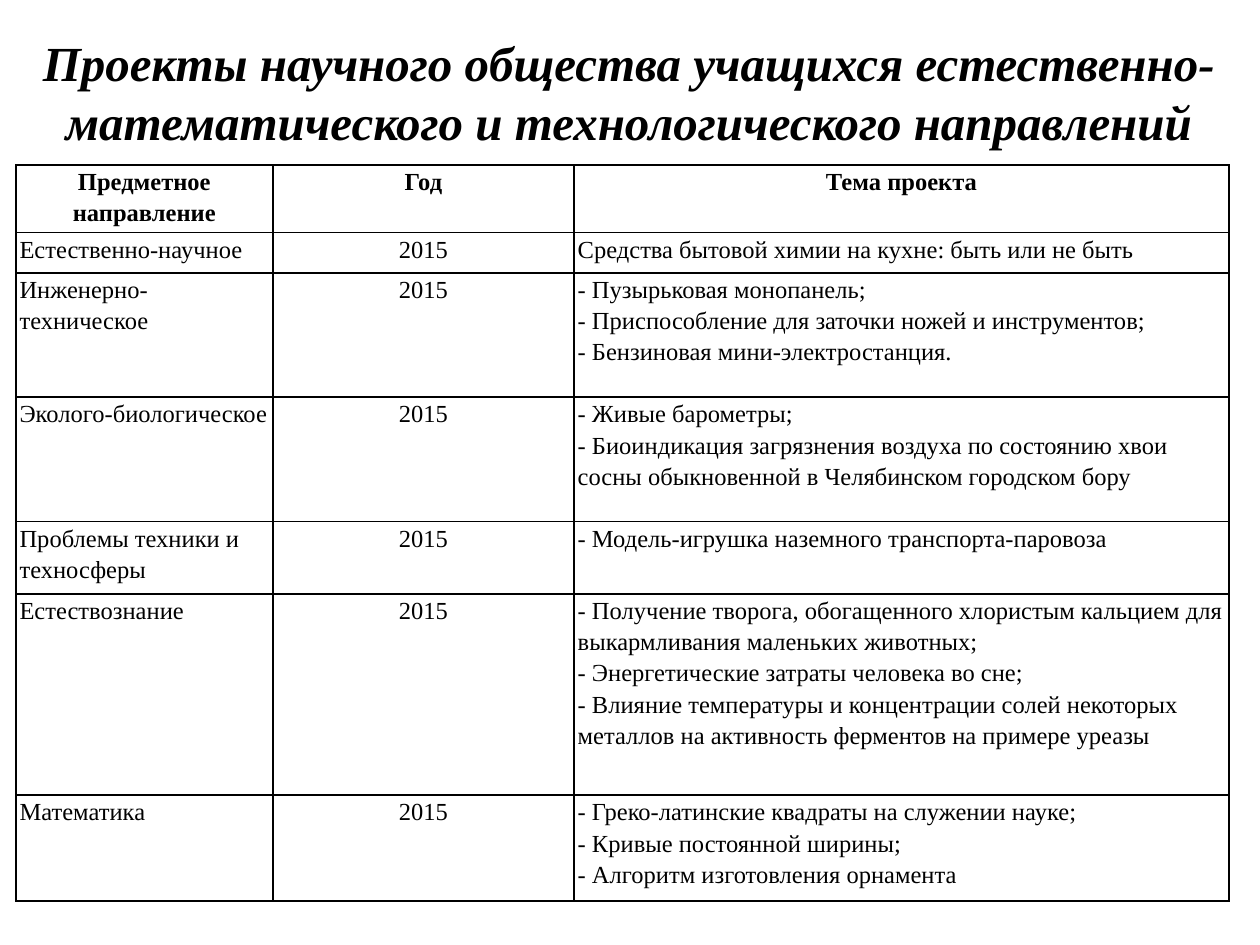
from lxml import etree
from pptx import Presentation, util as u
from pptx.dml.color import RGBColor
from pptx.enum import text
from pptx.oxml import ns

COLORS = {"ink": "000000"}
FONT = "Times New Roman"
TITLE = ("Проекты научного общества учащихся естественно-математического "
         "и технологического направлений")
YEAR = "2015"
HEADINGS = ["Предметное направление", "Год", "Тема проекта"]
PROJECTS = [
    ("Естественно-научное", ["Средства бытовой химии на кухне: быть или не быть"]),
    ("Инженерно-техническое", [
        "- Пузырьковая монопанель;",
        "- Приспособление для заточки ножей и инструментов;",
        "- Бензиновая мини-электростанция.",
    ]),
    ("Эколого-биологическое", [
        "- Живые барометры;",
        "- Биоиндикация загрязнения воздуха по состоянию хвои сосны "
        "обыкновенной в Челябинском городском бору",
    ]),
    ("Проблемы техники и техносферы", ["- Модель-игрушка наземного транспорта-паровоза"]),
    ("Естествознание", [
        "- Получение творога, обогащенного хлористым кальцием для "
        "выкармливания маленьких животных;",
        "- Энергетические затраты человека во сне;",
        "- Влияние температуры и концентрации солей некоторых металлов "
        "на активность ферментов на примере уреазы",
    ]),
    ("Математика", [
        "- Греко-латинские квадраты на служении науке;",
        "- Кривые постоянной ширины;",
        "- Алгоритм изготовления орнамента",
    ]),
]
COLUMN_WIDTHS = [147, 172, 374.4]
ROW_HEIGHTS = [36, 23, 71, 71, 41.5, 115, 60.5]
CELL_FORMAT = {
    "margin_left": u.Pt(2.16), "margin_right": u.Pt(2.16),
    "margin_top": 0, "margin_bottom": 0,
    "vertical_anchor": text.MSO_ANCHOR.TOP,
}


def set_values(target, values):
    for name, value in values.items():
        setattr(target, name, value)


def write_lines(frame, lines, align, spacing, font):
    for index, line in enumerate(lines):
        para = frame.add_paragraph() if index else frame.paragraphs[0]
        set_values(para, {"alignment": align, "line_spacing": spacing})
        span = para.add_run()
        span.text = line
        set_values(span.font, {"name": FONT, **font})
        span.font.color.rgb = RGBColor.from_string(COLORS["ink"])


def add_title(page):
    box = page.shapes.add_textbox(u.Pt(7.2), 0, u.Pt(704.2), u.Pt(104.4))
    frame = box.text_frame
    set_values(frame, {"word_wrap": True, "vertical_anchor": text.MSO_ANCHOR.MIDDLE})
    write_lines(frame, [TITLE], text.PP_ALIGN.CENTER, 1.0,
                {"size": u.Pt(28), "bold": True, "italic": True})


def add_borders(cell):
    properties = cell._tc.get_or_add_tcPr()
    for side in ("lnL", "lnR", "lnT", "lnB"):
        line = etree.SubElement(properties, ns.qn(f"a:{side}"), w=str(u.Pt(1)))
        fill = etree.SubElement(line, ns.qn("a:solidFill"))
        etree.SubElement(fill, ns.qn("a:srgbClr"), val=COLORS["ink"])


def fill_cell(cell, lines, align, bold):
    set_values(cell, CELL_FORMAT)
    add_borders(cell)
    cell.fill.background()
    write_lines(cell.text_frame, lines, align, 1.15,
                {"size": u.Pt(14), "bold": bold, "italic": False})


def add_projects(page):
    rows = [[[heading] for heading in HEADINGS]]
    rows += [[[subject], [YEAR], topics] for subject, topics in PROJECTS]
    frame = page.shapes.add_table(
        len(rows), len(HEADINGS), u.Pt(9), u.Pt(94.3),
        u.Pt(sum(COLUMN_WIDTHS)), u.Pt(sum(ROW_HEIGHTS)))
    table = frame.table
    set_values(table, {"first_row": False, "horz_banding": False})
    for column, width in zip(table.columns, COLUMN_WIDTHS):
        column.width = u.Pt(width)
    for row, height in zip(table.rows, ROW_HEIGHTS):
        row.height = u.Pt(height)
    for row_index, row in enumerate(rows):
        header = row_index == 0
        for column_index, lines in enumerate(row):
            centred = header or column_index == 1
            align = text.PP_ALIGN.CENTER if centred else text.PP_ALIGN.LEFT
            fill_cell(table.cell(row_index, column_index), lines, align, header)


def main():
    deck = Presentation()
    set_values(deck, {"slide_width": u.Pt(720), "slide_height": u.Pt(540)})
    page = deck.slides.add_slide(deck.slide_layouts[6])
    add_title(page)
    add_projects(page)
    deck.save("out.pptx")


if __name__ == "__main__":
    main()
